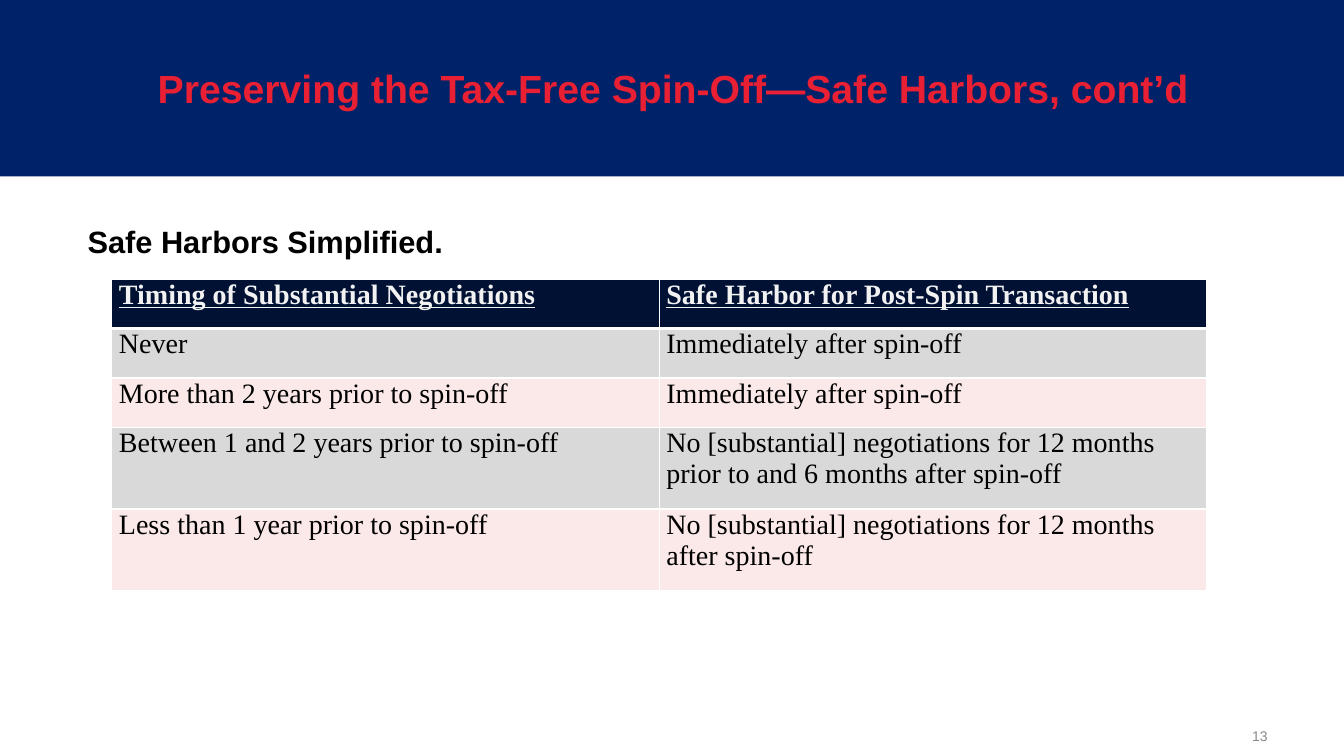
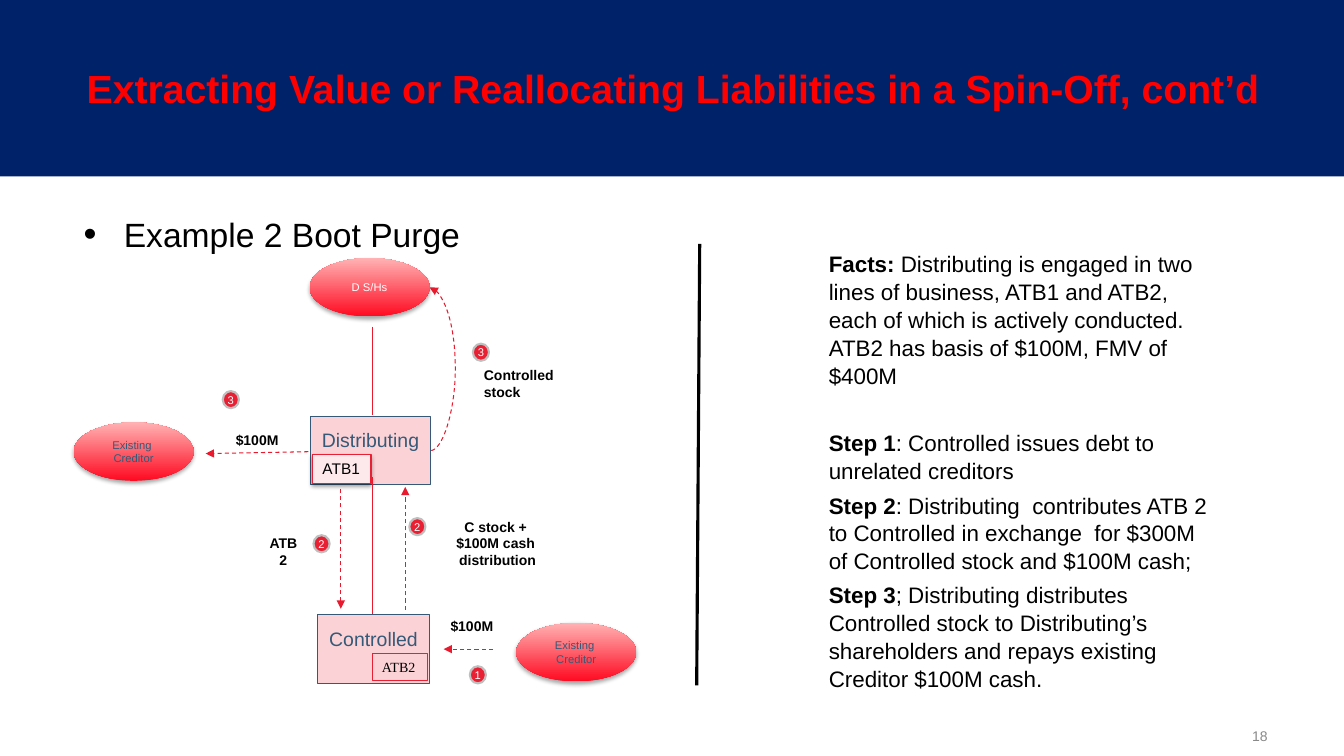
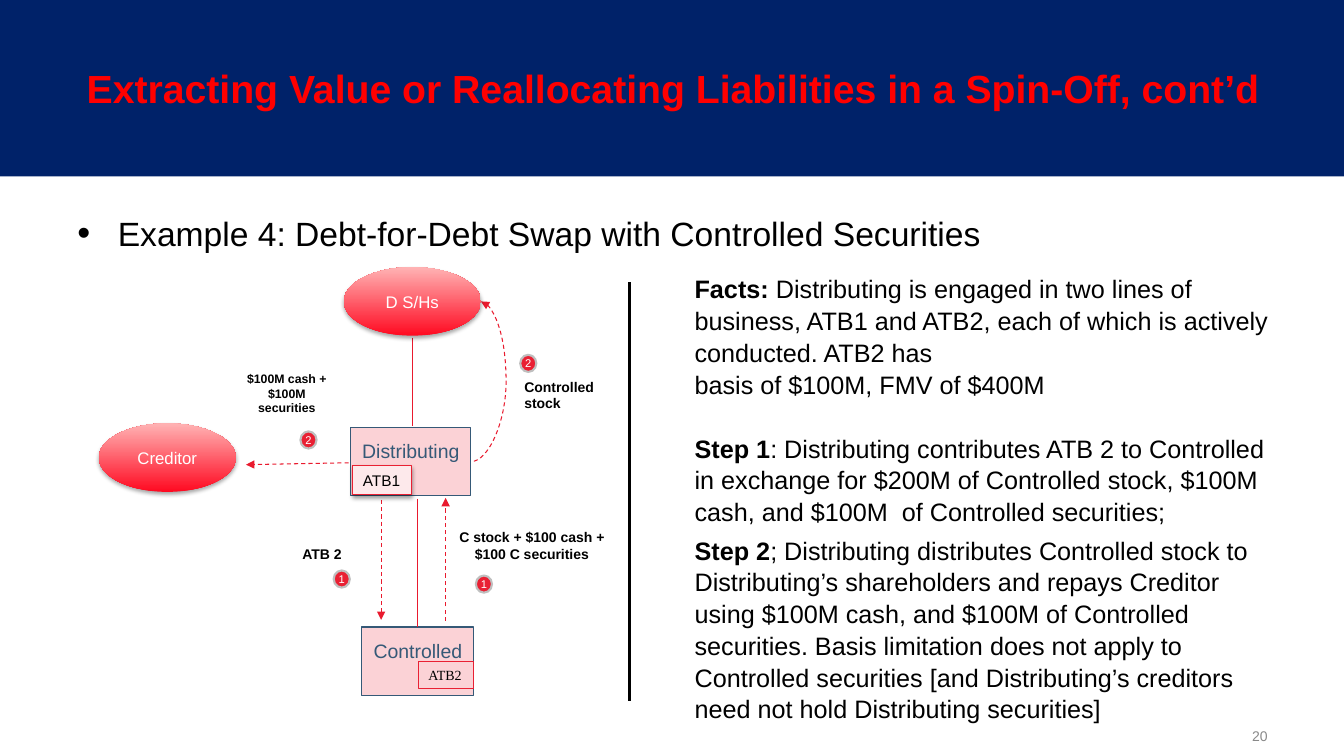
from dataclasses import dataclass

from lxml import etree
from pptx import Presentation
from pptx.dml.color import RGBColor
from pptx.enum.dml import MSO_LINE
from pptx.enum.shapes import MSO_CONNECTOR, MSO_SHAPE
from pptx.enum.text import MSO_ANCHOR, PP_ALIGN
from pptx.oxml.ns import qn
from pptx.util import Inches, Pt

LEFT, CENTER, RIGHT = PP_ALIGN.LEFT, PP_ALIGN.CENTER, PP_ALIGN.RIGHT
TOP, MIDDLE = MSO_ANCHOR.TOP, MSO_ANCHOR.MIDDLE
RECT, OVAL = MSO_SHAPE.RECTANGLE, MSO_SHAPE.OVAL
DOT = MSO_SHAPE.FLOWCHART_CONNECTOR
STRAIGHT, CURVE = MSO_CONNECTOR.STRAIGHT, MSO_CONNECTOR.CURVE
DASH = MSO_LINE.DASH

DEFAULT_INSETS = (0.1, 0.05, 0.1, 0.05)
LABEL_INSETS = (0, 0.02, 0, 0)


@dataclass(frozen=True)
class Theme:
    # Colours
    band: str = "002269"
    title_red: str = "E92033"
    bright_red: str = "FF0000"
    ink: str = "000000"
    white: str = "FFFFFF"
    footer: str = "898989"
    flow: str = "E91A2E"
    company_fill: str = "FBD2D6"
    company_ink: str = "355977"
    business_fill: str = "FDE9EB"
    badge_rim: str = "BFBFBF"
    oval_bottom: str = "FF0A21"
    oval_top: str = "FFB3B4"
    head_fill: str = "001134"
    head_ink: str = "F2F2F2"
    row_fills: tuple = ("D9D9D9", "FBE8E8")
    # Fonts and type sizes
    sans: str = "Arial"
    serif: str = "Times New Roman"
    title_size: float = 28
    topic_size: float = 24
    subhead_size: float = 22
    table_size: float = 20
    company_size: float = 13.9
    label_size: float = 10
    badge_size: float = 8


THEME = Theme()


def rgb(value):
    return RGBColor.from_string(value)


def write_text(frame, paragraphs, *, size, color=THEME.ink, font=THEME.sans,
               bold=False, underline=False, align=LEFT, anchor=TOP, wrap=True,
               insets=DEFAULT_INSETS, line_spacing=None, before=(), after=()):
    """Fill a frame; a (lead, rest) paragraph has its lead in bold."""
    frame.word_wrap = wrap
    frame.vertical_anchor = anchor
    (frame.margin_left, frame.margin_top,
     frame.margin_right, frame.margin_bottom) = map(Inches, insets)
    for index, content in enumerate(paragraphs):
        paragraph = frame.add_paragraph() if index else frame.paragraphs[0]
        paragraph.alignment = align
        if line_spacing:
            paragraph.line_spacing = line_spacing
        if index < len(before):
            paragraph.space_before = Pt(before[index])
        if index < len(after):
            paragraph.space_after = Pt(after[index])
        if isinstance(content, str):
            parts = [(content, bold)]
        else:
            parts = [(content[0], True), (content[1], False)]
        for text, is_bold in parts:
            for number, piece in enumerate(text.split("\n")):
                if number:
                    paragraph.add_line_break()
                run = paragraph.add_run()
                run.text = piece
                run.font.name = font
                run.font.size = Pt(size)
                run.font.bold = is_bold
                run.font.underline = underline
                run.font.color.rgb = rgb(color)


class Deck:
    def __init__(self, theme):
        self.theme = theme
        self.presentation = Presentation()
        self.presentation.slide_width = Inches(13.33)
        self.presentation.slide_height = Inches(7.5)
        self.slide = None

    def new_slide(self, title, number, title_color):
        """Start a slide with its band, title and page number."""
        theme = self.theme
        blank = self.presentation.slide_layouts[6]
        self.slide = self.presentation.slides.add_slide(blank)
        self.shape(RECT, 0, 0, 13.33, 1.75, fill=theme.band)
        self.text(0.67, 0.25, 12.01, 1.25, [title], size=theme.title_size,
                  color=title_color, bold=True, align=CENTER, anchor=MIDDLE)
        self.text(9.67, 7.1, 3, 0.4, [str(number)], size=theme.label_size,
                  color=theme.footer, align=RIGHT, anchor=MIDDLE)

    def text(self, left, top, width, height, paragraphs, **fmt):
        box = self.slide.shapes.add_textbox(
            Inches(left), Inches(top), Inches(width), Inches(height))
        write_text(box.text_frame, paragraphs, **fmt)
        return box

    def label(self, left, top, width, height, *paragraphs, **fmt):
        style = dict(size=self.theme.label_size, bold=True, insets=LABEL_INSETS)
        self.text(left, top, width, height, paragraphs, **{**style, **fmt})

    def topic(self, left, top, text):
        """Bulleted heading above a diagram."""
        box = self.text(left, top, 12.01, 4.93, [text], size=self.theme.topic_size,
                        line_spacing=1.1, before=[10.5], after=[2.6])
        props = box.text_frame.paragraphs[0]._p.get_or_add_pPr()
        props.set("marL", str(Inches(0.4)))
        props.set("indent", str(-Inches(0.4)))
        etree.SubElement(props, qn("a:buSzPct"), val="110000")
        etree.SubElement(props, qn("a:buFont"), typeface=self.theme.sans)
        etree.SubElement(props, qn("a:buChar"), char="•")

    def shape(self, kind, left, top, width, height, fill=None, line=None,
              weight=0.75, shadow_alpha=None):
        shape = self.slide.shapes.add_shape(
            kind, Inches(left), Inches(top), Inches(width), Inches(height))
        shape.shadow.inherit = False
        if fill:
            shape.fill.solid()
            shape.fill.fore_color.rgb = rgb(fill)
        else:
            shape.fill.background()
        if line:
            shape.line.color.rgb = rgb(line)
            shape.line.width = Pt(weight)
        else:
            shape.line.fill.background()
        if shadow_alpha:
            effects = shape.element.spPr.find(qn("a:effectLst"))
            shadow = etree.SubElement(
                effects, qn("a:outerShdw"), blurRad=str(Pt(3.1)),
                dist=str(Pt(1.7)), dir="5400000", rotWithShape="0")
            shade = etree.SubElement(shadow, qn("a:srgbClr"), val=self.theme.ink)
            etree.SubElement(shade, qn("a:alpha"), val=str(shadow_alpha * 1000))
        return shape

    def party(self, left, top, width, height, *lines, size, color):
        """Shaded oval for a shareholder or creditor."""
        oval = self.shape(OVAL, left, top, width, height, shadow_alpha=35)
        oval.fill.gradient()
        oval.fill.gradient_angle = 90
        shades = (self.theme.oval_bottom, self.theme.oval_top)
        for stop, shade in zip(oval.fill.gradient_stops, shades):
            stop.color.rgb = rgb(shade)
        write_text(oval.text_frame, lines, size=size, color=color,
                   align=CENTER, anchor=MIDDLE)

    def company(self, left, top, width, name):
        box = self.shape(RECT, left, top, width, 0.68,
                         fill=self.theme.company_fill, line=self.theme.company_ink)
        write_text(box.text_frame, [name], size=self.theme.company_size,
                   color=self.theme.company_ink, align=CENTER, wrap=False,
                   insets=(0.1, 0.12, 0.1, 0.05))

    def business(self, left, top, width, height, name, fill=None,
                 shadow_alpha=None, **fmt):
        box = self.shape(RECT, left, top, width, height, fill=fill,
                         line=self.theme.title_red, shadow_alpha=shadow_alpha)
        write_text(box.text_frame, [name], insets=(0.1, 0.05, 0, 0.05), **fmt)

    def badges(self, *steps):
        """Round step numbers, each given as (number, left, top)."""
        for number, left, top in steps:
            dot = self.shape(DOT, left, top, 0.16, 0.17, fill=self.theme.title_red,
                             line=self.theme.badge_rim, weight=1.5)
            write_text(dot.text_frame, [str(number)], size=self.theme.badge_size,
                       color=self.theme.white, align=CENTER, anchor=MIDDLE,
                       wrap=False, insets=(0, 0, 0, 0))

    def line(self, start, end, kind=STRAIGHT, color=None, weight=0.75,
             dash=False, arrow=None):
        link = self.slide.shapes.add_connector(
            kind, *(Inches(value) for value in (*start, *end)))
        link.line.color.rgb = rgb(color or self.theme.flow)
        link.line.width = Pt(weight)
        if dash:
            link.line.dash_style = DASH
        props = link.element.spPr
        if arrow:
            etree.SubElement(props.find(qn("a:ln")), qn(arrow), type="triangle")
        etree.SubElement(props, qn("a:effectLst"))
        return link

    def flow(self, start, end):
        self.line(start, end, dash=True, arrow="a:tailEnd")

    def arc(self, start, end, bulge):
        """Curved flow that points back at its start."""
        link = self.line(start, end, CURVE, dash=True, arrow="a:headEnd")
        ratio = round(bulge / (end[0] - start[0]) * 100000)
        guides = link.element.spPr.find(qn("a:prstGeom")).find(qn("a:avLst"))
        etree.SubElement(guides, qn("a:gd"), name="adj1", fmla=f"val {ratio}")

    def table(self, left, top, column_width, row_heights, rows):
        theme = self.theme
        frame = self.slide.shapes.add_table(
            len(rows), len(rows[0]), Inches(left), Inches(top),
            Inches(column_width * len(rows[0])), Inches(sum(row_heights)))
        grid = frame.table
        grid.horz_banding = False
        for column in grid.columns:
            column.width = Inches(column_width)
        for r, (height, texts) in enumerate(zip(row_heights, rows)):
            grid.rows[r].height = Inches(height)
            header = r == 0
            for c, text in enumerate(texts):
                cell = grid.cell(r, c)
                write_text(cell.text_frame, [text], size=theme.table_size,
                           color=theme.head_ink if header else theme.ink,
                           font=theme.serif, bold=header, underline=header,
                           before=[12])
                cell.margin_left = cell.margin_right = Inches(0.07)
                cell.margin_top = cell.margin_bottom = 0
                cell.vertical_anchor = TOP
                cell.fill.solid()
                cell.fill.fore_color.rgb = rgb(
                    theme.head_fill if header else theme.row_fills[(r - 1) % 2])
                self.cell_borders(cell, r)

    def cell_borders(self, cell, row):
        props = cell._tc.get_or_add_tcPr()
        thick_side = {0: "a:lnB", 1: "a:lnT"}.get(row)
        for place, side in enumerate(("a:lnL", "a:lnR", "a:lnT", "a:lnB")):
            border = etree.Element(qn(side), w=str(Pt(3 if side == thick_side else 1)))
            paint = etree.SubElement(border, qn("a:solidFill"))
            etree.SubElement(paint, qn("a:srgbClr"), val=self.theme.white)
            props.insert(place, border)

    def spin_structure(self, dx, dy, controlled, atb2, lower_line):
        """Parts common to both spin-off diagrams, moved by (dx, dy)."""
        def at(x, y):
            return x + dx, y + dy

        self.label(*at(4.8, 3.62), 0.76, 0.35, "Controlled stock")
        self.flow(at(3.13, 4.48), at(2.04, 4.5))
        self.flow(at(4.02, 6.05), at(4.02, 4.83))
        self.flow(at(3.38, 4.85), at(3.38, 6.04))
        self.company(*at(3.08, 4.13), 1.19, "Distributing")
        self.company(*controlled, 1.11, "Controlled")
        self.line(at(3.69, 3.24), at(3.69, 4.12))
        self.business(*at(3.1, 4.51), 0.58, 0.29, "ATB1", size=11,
                      fill=self.theme.business_fill, shadow_alpha=38)
        self.business(*atb2, 0.55, 0.27, "ATB2", size=self.theme.label_size,
                      font=self.theme.serif)
        self.line(*lower_line)

    def divider(self, start, end):
        self.line(start, end, color=self.theme.ink, weight=2.25)


def safe_harbors(deck):
    deck.new_slide("Preserving the Tax-Free Spin-Off—Safe Harbors, cont’d", 13,
                   THEME.title_red)
    deck.text(0.77, 2.12, 11.91, 4.83, ["Safe Harbors Simplified."],
              size=THEME.subhead_size, bold=True, line_spacing=1.1,
              before=[10.5], after=[2.6])
    deck.table(1.11, 2.77, 5.43, [0.49, 0.49, 0.49, 0.81, 0.81], [
        ("Timing of Substantial Negotiations", "Safe Harbor for Post-Spin Transaction"),
        ("Never", "Immediately after spin-off"),
        ("More than 2 years prior to spin-off", "Immediately after spin-off"),
        ("Between 1 and 2 years prior to spin-off",
         "No [substantial] negotiations for 12 months prior to and 6 months after spin-off"),
        ("Less than 1 year prior to spin-off",
         "No [substantial] negotiations for 12 months after spin-off"),
    ])


def boot_purge(deck):
    deck.new_slide("Extracting Value or Reallocating Liabilities in a Spin-Off, cont’d",
                   18, THEME.bright_red)
    deck.topic(0.73, 2.03, "Example 2 Boot Purge")

    # Diagram
    deck.spin_structure(0, 0, controlled=(3.15, 6.1), atb2=(3.69, 6.48),
                        lower_line=((3.69, 4.73), (3.69, 6.09)))
    deck.arc((4.26, 2.85), (4.27, 4.47), 0.26)
    deck.flow((4.89, 6.44), (4.4, 6.44))
    deck.label(2.62, 5.28, 0.38, 0.35, "ATB 2", align=CENTER)
    deck.label(4.25, 5.12, 1.37, 0.52, "C stock + \n$100M cash ", "distribution",
               align=CENTER)
    for left, top in ((2.24, 4.23), (4.37, 6.08)):
        deck.label(left, top, 0.63, 0.27, "$100M", wrap=False, insets=DEFAULT_INSETS)
    deck.party(3.07, 2.56, 1.19, 0.58, "D S/Hs", size=8, color=THEME.white)
    for left, top in ((0.73, 4.19), (5.12, 6.18)):
        deck.party(left, top, 1.19, 0.58, "Existing ", "Creditor", size=8,
                   color=THEME.company_ink)
    deck.badges((3, 2.21, 3.88), (2, 3.11, 5.31), (2, 4.06, 5.14),
                (1, 4.66, 6.61), (3, 4.69, 3.41))
    deck.divider((6.94, 2.42), (6.91, 6.8))

    # Facts and steps
    deck.text(8.22, 2.39, 3.79, 5.26, [
        ("Facts: ", "Distributing is engaged in two lines of business, ATB1 and ATB2, "
         "each of which is actively conducted. ATB2 has basis of $100M, FMV of $400M"),
        ("Step 1", ": Controlled issues debt to unrelated creditors"),
        ("Step 2", ": Distributing  contributes ATB 2 to Controlled in exchange  for "
         "$300M of Controlled stock and $100M cash;"),
        ("Step 3", "; Distributing distributes Controlled stock to Distributing’s "
         "shareholders and repays existing Creditor $100M cash."),
    ], size=16, insets=(0, 0.08, 0, 0), line_spacing=1.04, after=[28.5, 4.4, 4.4, 4.4])


def debt_swap(deck):
    deck.new_slide("Extracting Value or Reallocating Liabilities in a Spin-Off, cont’d",
                   20, THEME.bright_red)
    deck.topic(0.67, 2.02, "Example 4: Debt-for-Debt Swap with Controlled Securities")

    # Facts and steps
    deck.text(6.88, 2.69, 5.86, 4.35, [
        ("Facts: ", "Distributing is engaged in two lines of business, ATB1 and ATB2, "
         "each of which is actively conducted. ATB2 has \nbasis of $100M, FMV of $400M"),
        ("Step 1", ": Distributing contributes ATB 2 to Controlled in exchange for "
         "$200M of Controlled stock, $100M cash, and $100M  of Controlled securities;"),
        ("Step 2", "; Distributing distributes Controlled stock to Distributing’s "
         "shareholders and repays Creditor using $100M cash, and $100M of Controlled "
         "securities. Basis limitation does not apply to Controlled securities "
         "[and Distributing’s creditors need not hold Distributing securities]"),
    ], size=18, insets=(0.01, 0.01, 0, 0), line_spacing=1.05, before=[1, 23, 4.9])

    # Diagram
    deck.spin_structure(0.4, 0.11, controlled=(3.59, 6.22), atb2=(4.15, 6.56),
                        lower_line=((4.14, 4.95), (4.14, 6.22)))
    deck.arc((4.77, 2.99), (4.67, 4.58), 0.25)
    deck.label(2.4, 3.66, 0.89, 0.78, "$100M cash +", "$100M securities",
               size=8.8, align=CENTER)
    deck.label(3, 5.39, 0.56, 0.18, "ATB 2")
    deck.label(4.5, 5.22, 1.55, 0.35, "C stock + $100 cash +", "$100 C securities",
               align=CENTER)
    for name, left, top in (("D S/Hs", 3.41, 2.65), ("Creditor", 0.98, 4.2)):
        deck.party(left, top, 1.36, 0.68, name, size=12, color=THEME.white)
    deck.badges((1, 3.31, 5.66), (1, 4.72, 5.71), (2, 2.98, 4.28), (2, 5.16, 3.52))
    deck.divider((6.24, 2.8), (6.24, 6.95))


def main():
    deck = Deck(THEME)
    for build in (safe_harbors, boot_purge, debt_swap):
        build(deck)
    deck.presentation.save("out.pptx")


if __name__ == "__main__":
    main()
